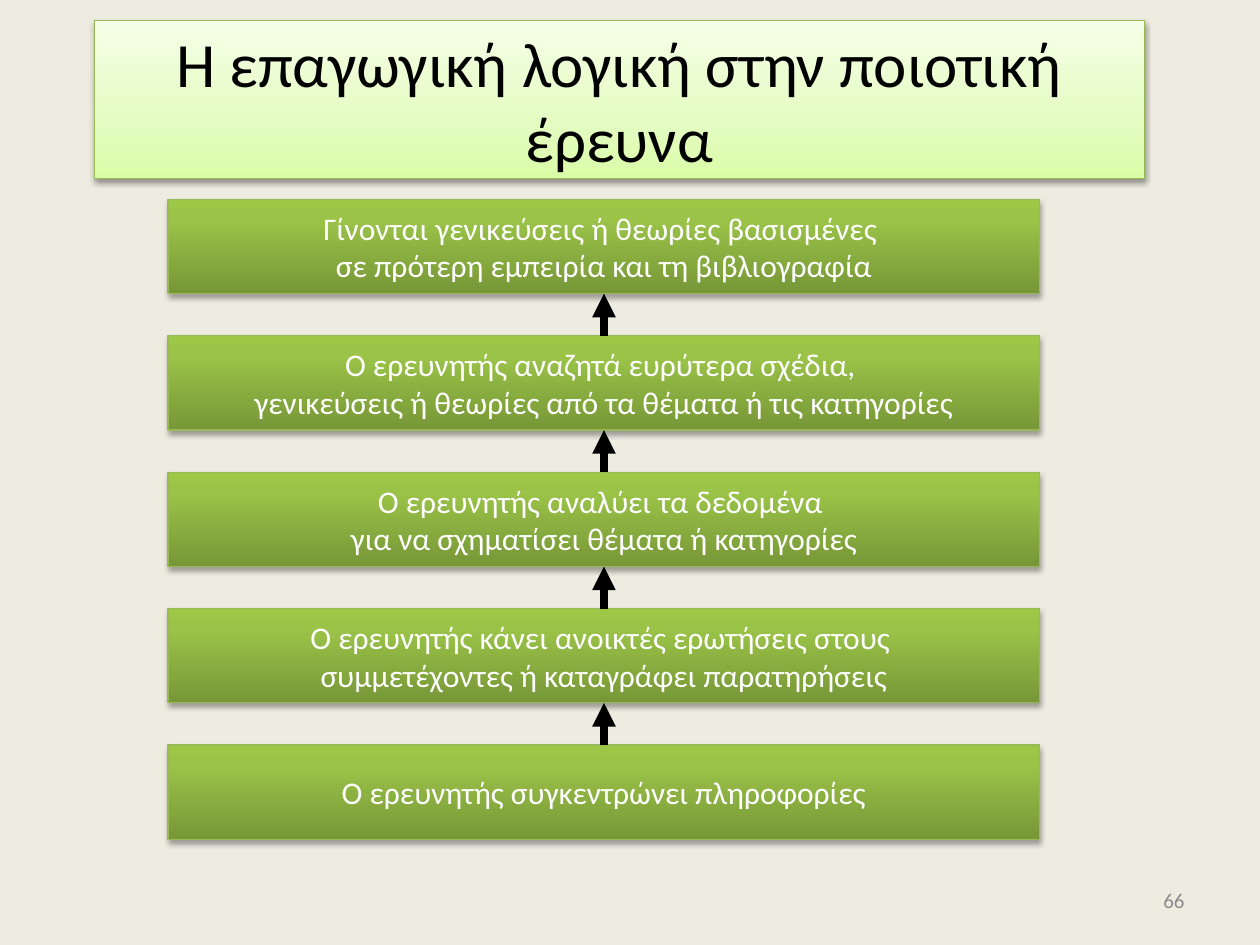
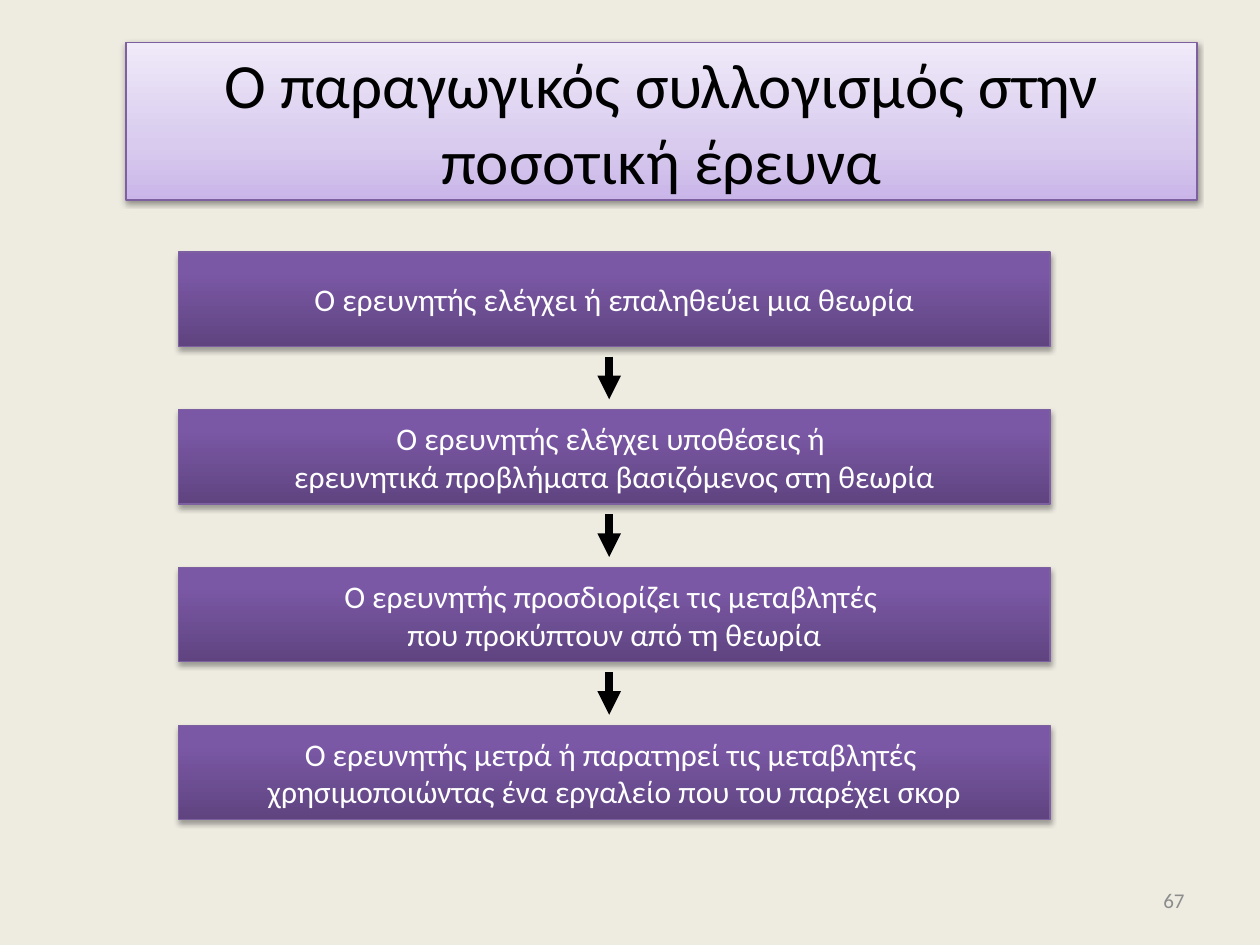
import lxml.etree
import pptx
import pptx.dml.color
import pptx.enum.shapes
import pptx.enum.text
import pptx.oxml.ns
import pptx.util

Cm = pptx.util.Cm
Pt = pptx.util.Pt
qn = pptx.oxml.ns.qn
ALIGN = pptx.enum.text.PP_ALIGN

FONT = "Calibri"
PAPER = "EEECE1"
BLACK = "000000"
WHITE = "FFFFFF"
GREY = "8C8C8C"
GREEN = {
    "line": "98B955",
    "pale": [(0, "DAFDA7"), (35, "E4FCC2"), (100, "F5FFE7")],
    "deep": [(0, "779737"), (80, "9BC348"), (100, "9DC746")],
}
PURPLE = {
    "line": "7D60A0",
    "pale": [(0, "C9B5E8"), (35, "D8CBEE"), (100, "F0EAF9")],
    "deep": [(0, "5F4480"), (80, "7B58A6"), (100, "7C57A8")],
}
BOX_W = 17.57
BOX_H = 1.9

RISE = [
    "Γίνονται γενικεύσεις ή θεωρίες βασισμένες \nσε πρότερη εμπειρία και τη βιβλιογραφία",
    "Ο ερευνητής αναζητά ευρύτερα σχέδια, \nγενικεύσεις ή θεωρίες από τα θέματα ή τις κατηγορίες",
    "Ο ερευνητής αναλύει τα δεδομένα \nγια να σχηματίσει θέματα ή κατηγορίες",
    "Ο ερευνητής κάνει ανοικτές ερωτήσεις στους \nσυμμετέχοντες ή καταγράφει παρατηρήσεις",
    "Ο ερευνητής συγκεντρώνει πληροφορίες",
]
FALL = [
    "Ο ερευνητής ελέγχει ή επαληθεύει μια θεωρία",
    "Ο ερευνητής ελέγχει υποθέσεις ή \nερευνητικά προβλήματα βασιζόμενος στη θεωρία",
    "Ο ερευνητής προσδιορίζει τις μεταβλητές \nπου προκύπτουν από τη θεωρία",
    "Ο ερευνητής μετρά ή παρατηρεί τις μεταβλητές \nχρησιμοποιώντας ένα εργαλείο που του παρέχει σκορ",
]


def tint(code):
    return pptx.dml.color.RGBColor.from_string(code)


def add_node(parent, tag, **attrs):
    return lxml.etree.SubElement(parent, qn(tag), attrs)


def place(shape, left, top, width, height):
    shape.left, shape.top = Cm(left), Cm(top)
    shape.width, shape.height = Cm(width), Cm(height)


def write(shape, text, size, code, align, wrap=True):
    frame = shape.text_frame
    frame.text = text
    frame.word_wrap = wrap
    frame.auto_size = pptx.enum.text.MSO_AUTO_SIZE.NONE
    frame.vertical_anchor = pptx.enum.text.MSO_ANCHOR.MIDDLE
    for para in frame.paragraphs:
        para.alignment = align
        for run in para.runs:
            run.font.name = FONT
            run.font.size = Pt(size)
            run.font.color.rgb = tint(code)


def paint(shape, stops, line, drop, alpha):
    shape.fill.gradient()
    shape.fill.gradient_angle = 90
    props = shape._element.spPr
    ramp = props.find(qn("a:gradFill")).find(qn("a:gsLst"))
    for old in list(ramp):
        ramp.remove(old)
    for spot, code in stops:
        stop = add_node(ramp, "a:gs", pos=str(spot * 1000))
        add_node(stop, "a:srgbClr", val=code)
    shape.line.color.rgb = tint(line)
    shape.line.width = Pt(0.75)
    shape.shadow.inherit = False
    shade = add_node(props.find(qn("a:effectLst")), "a:outerShdw",
                     blurRad=str(Pt(3.1)), dist=str(Pt(drop)),
                     dir="5400000", rotWithShape="0")
    color = add_node(shade, "a:srgbClr", val=BLACK)
    add_node(color, "a:alpha", val=str(alpha * 1000))


def add_page(deck, title, area, theme, number):
    slide = deck.slides.add_slide(deck.slide_layouts[5])
    head = slide.shapes.title
    place(head, *area)
    write(head, title, 36, BLACK, ALIGN.CENTER)
    paint(head, theme["pale"], theme["line"], 1.6, 38)
    foot = slide.shapes.add_textbox(Cm(18.2), Cm(17.65), Cm(5.93), Cm(1.01))
    write(foot, str(number), 12, GREY, ALIGN.RIGHT)
    return slide


def add_stack(slide, steps, left, top, pitch, theme):
    boxes = []
    for row, text in enumerate(steps):
        box = slide.shapes.add_shape(
            pptx.enum.shapes.MSO_SHAPE.RECTANGLE,
            Cm(left), Cm(top + row * pitch), Cm(BOX_W), Cm(BOX_H))
        write(box, text, 18, WHITE, ALIGN.CENTER, wrap=False)
        paint(box, theme["deep"], theme["line"], 1.8, 35)
        boxes.append(box)
    return boxes


def add_arrow(slide, x, start, end):
    arrow = slide.shapes.add_connector(
        pptx.enum.shapes.MSO_CONNECTOR.STRAIGHT, x, start, x, end)
    arrow.line.color.rgb = tint(BLACK)
    arrow.line.width = Pt(4.5)
    add_node(arrow.line._get_or_add_ln(), "a:tailEnd", type="triangle")
    add_node(arrow._element.spPr, "a:effectLst")
    return arrow


def main():
    deck = pptx.Presentation()
    deck.slide_width, deck.slide_height = Cm(25.4), Cm(19.05)
    back = deck.slide_master.background.fill
    back.solid()
    back.fore_color.rgb = tint(PAPER)

    slide = add_page(deck, "Η επαγωγική λογική στην ποιοτική έρευνα",
                     (1.9, 0.42, 21.17, 3.18), GREEN, 66)
    boxes = add_stack(slide, RISE, 3.39, 4.02, 2.75, GREEN)
    for upper, lower in zip(boxes, boxes[1:]):
        arrow = add_arrow(slide, Cm(12.17), lower.top, upper.top + upper.height)
        arrow.begin_connect(lower, 0)
        arrow.end_connect(upper, 2)

    slide = add_page(deck, "Ο παραγωγικός συλλογισμός στην ποσοτική έρευνα",
                     (2.54, 0.85, 21.59, 3.18), PURPLE, 67)
    boxes = add_stack(slide, FALL, 3.6, 5.08, 3.18, PURPLE)
    inset = Cm(0.21)
    for upper, lower in zip(boxes, boxes[1:]):
        add_arrow(slide, Cm(12.28), upper.top + upper.height + inset, lower.top - inset)

    deck.save("out.pptx")


if __name__ == "__main__":
    main()
